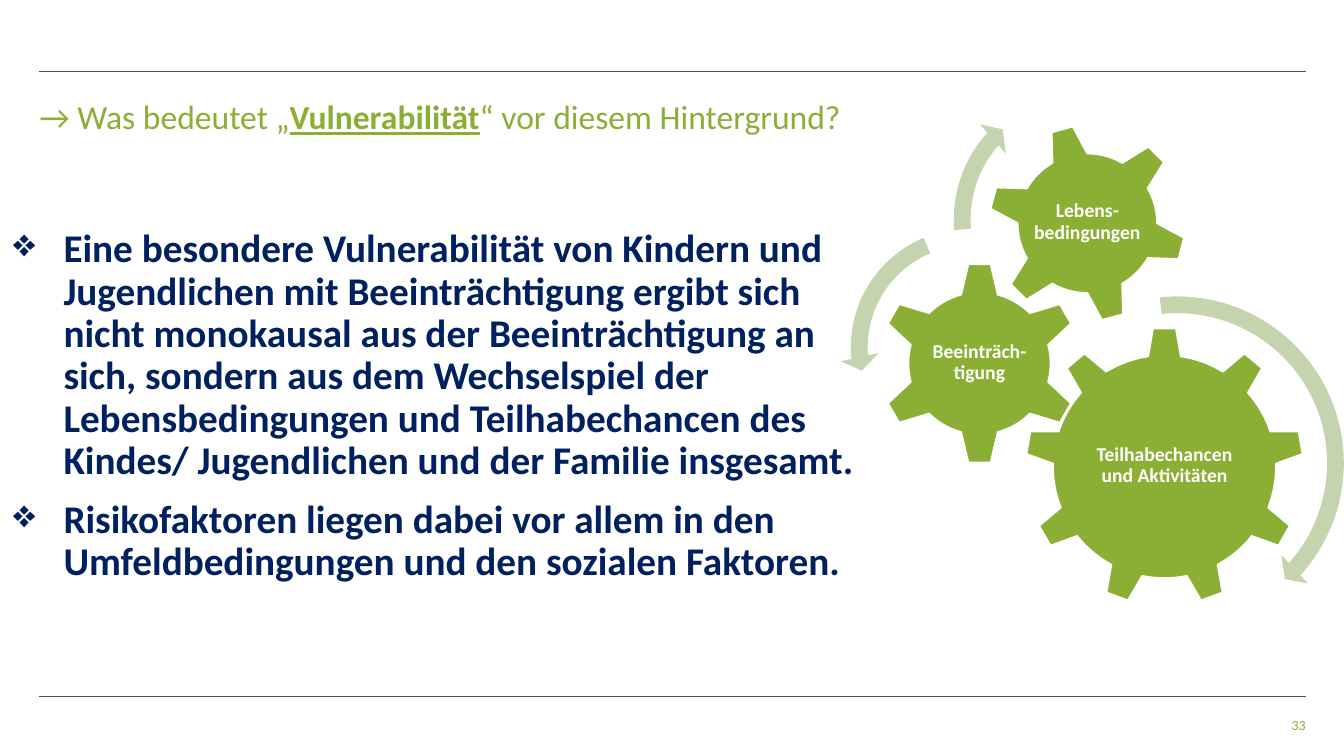
import pptx
import pptx.util
import pptx.dml.color
import pptx.enum.shapes
import pptx.enum.text
import lxml.etree
from dataclasses import dataclass
from pptx.util import Inches

SHAPE = pptx.enum.shapes.MSO_SHAPE
ALIGN = pptx.enum.text.PP_ALIGN
ANCHOR = pptx.enum.text.MSO_ANCHOR
NS = "{http://schemas.openxmlformats.org/drawingml/2006/main}"


@dataclass(frozen=True)
class Theme:
    face: str = "Calibri"
    green: str = "8BAF35"
    pale: str = "C4D4AE"
    navy: str = "002060"
    white: str = "FFFFFF"
    rule: str = "505050"
    head: int = 24
    body: int = 28
    label: int = 14
    small: int = 10


THEME = Theme()


def paint(color):
    return pptx.dml.color.RGBColor.from_string(color)


def lengths(box):
    return [Inches(n) for n in box]


def set_frame(frame, anchor, inset=0):
    frame.word_wrap = True
    frame.auto_size = pptx.enum.text.MSO_AUTO_SIZE.NONE
    frame.vertical_anchor = anchor
    frame.margin_left = frame.margin_right = Inches(inset)
    frame.margin_top = frame.margin_bottom = Inches(inset)


def style(para, size, color, bold=False, align=ALIGN.LEFT):
    para.alignment = align
    para.line_spacing = 0.9
    font = para.font
    font.name, font.size, font.bold = THEME.face, pptx.util.Pt(size), bold
    font.color.rgb = paint(color)


def add_text(slide, box, text, size, color, anchor, align, bold=False, inset=0):
    frame = slide.shapes.add_textbox(*lengths(box)).text_frame
    set_frame(frame, anchor, inset)
    para = frame.paragraphs[0]
    para.text = text
    style(para, size, color, bold, align)


def add_rule(slide, left, top, width):
    line = slide.shapes.add_connector(
        pptx.enum.shapes.MSO_CONNECTOR.STRAIGHT,
        *lengths((left, top, left + width, top)))
    line.line.color.rgb = paint(THEME.rule)
    line.line.width = pptx.util.Pt(0.5)
    lxml.etree.SubElement(line._element.spPr, NS + "effectLst")


def add_title(slide, box):
    title = slide.shapes.title
    title.left, title.top, title.width, title.height = lengths(box)
    set_frame(title.text_frame, ANCHOR.MIDDLE)
    para = title.text_frame.paragraphs[0]
    for text, key in (("→ Was bedeutet „", False), ("Vulnerabilität", True),
                      ("“ vor diesem Hintergrund?", False)):
        run = para.add_run()
        run.text = text
        run.font.bold = run.font.underline = key
    style(para, THEME.head, THEME.green)


def add_points(slide, box, points):
    frame = slide.shapes.add_textbox(*lengths(box)).text_frame
    set_frame(frame, ANCHOR.TOP)
    for i, text in enumerate(points):
        para = frame.add_paragraph() if i else frame.paragraphs[0]
        para.text = text
        props = para._p.get_or_add_pPr()
        props.set("marL", str(Inches(0.5)))
        props.set("indent", str(-Inches(0.5)))
        lxml.etree.SubElement(props, NS + "buChar", char="❖")
        style(para, THEME.body, THEME.navy, bold=True)
        if i:
            para.space_before = pptx.util.Pt(12)


def add_solid(slide, kind, left, top, size, color):
    shape = slide.shapes.add_shape(kind, *lengths((left, top, size, size)))
    shape.shadow.inherit = False
    shape.fill.solid()
    shape.fill.fore_color.rgb = paint(color)
    shape.line.fill.background()
    return shape


def add_gear(slide, kind, left, top, size, turn, text, wide, high):
    """Draw a gear with an upright label of the given size at its centre."""
    gear = add_solid(slide, kind, left, top, size, THEME.green)
    gear.rotation = turn
    gear.line.color.rgb = paint(THEME.white)
    gear.line.width = pptx.util.Pt(1)
    box = (left + (size - wide) / 2, top + (size - high) / 2 - 0.01, wide, high)
    add_text(slide, box, text, THEME.label, THEME.white,
             ANCHOR.MIDDLE, ALIGN.CENTER, bold=True, inset=0.02)


def add_arc(slide, kind, left, top, size, band, tip, end, start, head):
    """Draw a curved arrow; band and head in percent, the rest in degrees."""
    arc = add_solid(slide, kind, left, top, size, THEME.pale)
    values = [band / 100] + [deg * 0.6 for deg in (tip, end, start)] + [head / 100]
    for i, value in enumerate(values):
        arc.adjustments[i] = value


def add_gears(slide, left, top):
    """Place the three gears and their arrows from the given corner."""
    gears = (
        (SHAPE.GEAR_9, 1.84, 2.46, 2.76, 0, "Teilhabechancen und Aktivitäten", 1.65, 1.42),
        (SHAPE.GEAR_6, 0.38, 1.81, 2.01, 0, "Beeinträch-tigung", 1, 1),
        (SHAPE.GEAR_6, 1.47, 0.44, 1.97, 345, "Lebens-bedingungen", 1.1, 1.1),
    )
    arcs = (
        (SHAPE.CIRCULAR_ARROW, 1.58, 2.04, 3.53, 4.7, 4.98, 42.08, 264.05, 5.5),
        (SHAPE.LEFT_CIRCULAR_ARROW, 0, 1.37, 2.57, 6.5, 7.17, 174.82, 247.3, 7.5),
        (SHAPE.CIRCULAR_ARROW, 1.02, 0, 2.77, 6, 6.57, 221.9, 175.14, 7),
    )
    for draw, items in ((add_gear, gears), (add_arc, arcs)):
        for kind, x, y, *rest in items:
            draw(slide, kind, left + x, top + y, *rest)


def main():
    deck = pptx.Presentation()
    deck.slide_width, deck.slide_height = lengths((13.33, 7.5))
    slide = deck.slides.add_slide(deck.slide_layouts[5])
    for top in (0.71, 6.91):
        add_rule(slide, 0.39, top, 12.56)
    add_title(slide, (0.39, 1, 12.56, 0.36))
    add_points(slide, (0.13, 2.27, 8.58, 3.94), (
        "Eine besondere Vulnerabilität von Kindern und Jugendlichen mit "
        "Beeinträchtigung ergibt sich nicht monokausal aus der "
        "Beeinträchtigung an sich, sondern aus dem Wechselspiel der "
        "Lebensbedingungen und Teilhabechancen des Kindes/ Jugendlichen "
        "und der Familie insgesamt.",
        "Risikofaktoren liegen dabei vor allem in den Umfeldbedingungen "
        "und den sozialen Faktoren."))
    add_gears(slide, 8.33, 0.79)
    add_text(slide, (11.97, 7.13, 0.98, 0.15), "33", THEME.small, THEME.green,
             ANCHOR.BOTTOM, ALIGN.RIGHT)
    deck.save("out.pptx")


if __name__ == "__main__":
    main()
